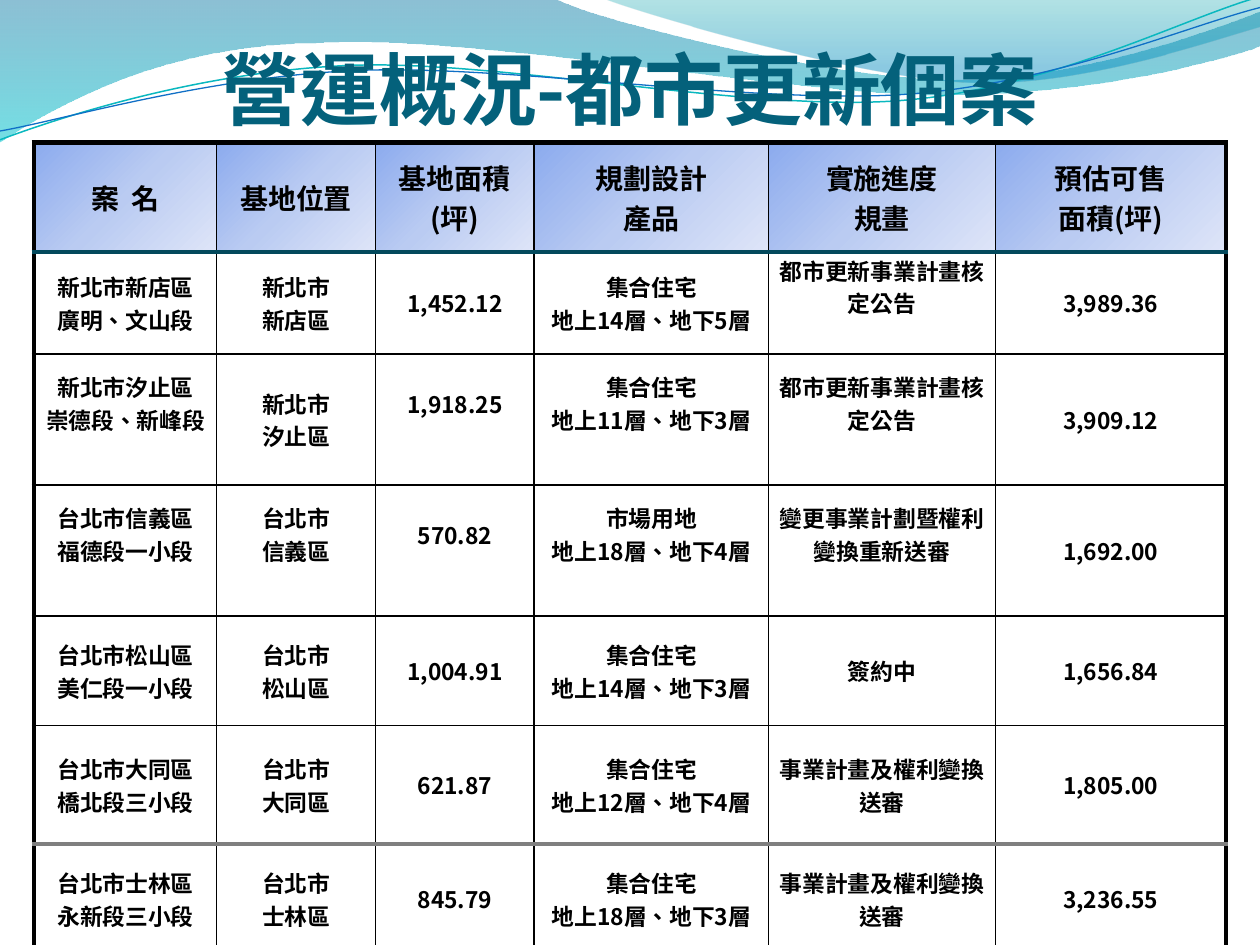
from lxml import etree
from pptx import Presentation
from pptx.dml.color import RGBColor
from pptx.enum.text import MSO_ANCHOR, MSO_AUTO_SIZE, PP_ALIGN
from pptx.oxml.ns import qn
from pptx.util import Inches, Pt

BOTTOM, MIDDLE = MSO_ANCHOR.BOTTOM, MSO_ANCHOR.MIDDLE
CENTER = PP_ALIGN.CENTER
NO_FIT = MSO_AUTO_SIZE.NONE
FONT = "Noto Sans CJK SC"
BLACK = RGBColor(0x00, 0x00, 0x00)
TITLE = RGBColor(0x04, 0x61, 0x7B)
HEAD_RULE = RGBColor(0x03, 0x49, 0x5C)
GRAY = RGBColor(0x7F, 0x7F, 0x7F)
DARK_GRAY = RGBColor(0x59, 0x59, 0x59)
WAVE_BLUE = RGBColor(0x00, 0x74, 0xA1)
WAVE_CYAN = RGBColor(0x00, 0xC6, 0xCF)
CREST_TEAL = RGBColor(0x00, 0xA1, 0xA9)
CREST_BLUE = RGBColor(0x00, 0x8B, 0xBF)
LINE_TEAL = RGBColor(0x0A, 0xB8, 0xBF)
LINE_BLUE = RGBColor(0x0F, 0x6F, 0xC6)
HEAD_STOPS = [(0, RGBColor(0x8C, 0xAB, 0xEE), 100), (50, RGBColor(0xBA, 0xCB, 0xF2), 100),
              (100, RGBColor(0xDE, 0xE5, 0xF8), 100)]


def add_gradient(parent, stops, angle):
    grad = etree.SubElement(parent, qn("a:gradFill"), rotWithShape="1")
    gs_list = etree.SubElement(grad, qn("a:gsLst"))
    for pos, color, alpha in stops:
        gs = etree.SubElement(gs_list, qn("a:gs"), pos=str(pos * 1000))
        clr = etree.SubElement(gs, qn("a:srgbClr"), val=str(color))
        etree.SubElement(clr, qn("a:alpha"), val=str(alpha * 1000))
    etree.SubElement(grad, qn("a:lin"), ang=str(angle * 60000), scaled="0")


def write_text(tf, text, size, color):
    tf.text = text
    for p in tf.paragraphs:
        p.alignment = CENTER
        for r in p.runs:
            r.font.size, r.font.bold, r.font.name = Pt(size), True, FONT
            r.font.color.rgb = color
            r_pr = r._r.get_or_add_rPr()
            r_pr.set("lang", "zh-TW")
            etree.SubElement(r_pr, qn("a:ea"), typeface=FONT)


prs = Presentation()
prs.slide_width, prs.slide_height = Inches(10), Inches(7.5)
s = prs.slides.add_slide(prs.slide_layouts[5])

waves = [
    ([(0, -0.01), (4.4, -0.01), (4.76, 0.17, 6.64, 0.63, 7.58, 0.63),
      (8.53, 0.63, 9.58, 0.26, 10, 0.09), (10.01, 0.36), (9.83, 0.44, 8.7, 0.76, 7.46, 0.75),
      (6.22, 0.75, 3.82, 0.28, 2.57, 0.34), (1.29, 0.35, 0.46, 0.83, -0.01, 1.13), (0, -0.01)],
     [(0, WAVE_BLUE, 45), (100, WAVE_CYAN, 55)], None, 0),
    ([(4.79, -0.01), (5.09, 0.11, 6.82, 0.62, 7.69, 0.65),
      (8.56, 0.69, 9.61, 0.32, 10, 0.21), (10, 0), (4.79, -0.01)],
     [(0, CREST_TEAL, 30), (80, CREST_BLUE, 45)], None, 0),
    ([(0, 1.11), (0.48, 0.93, 1.58, 0.57, 2.77, 0.52), (3.95, 0.47, 5.93, 0.89, 7.13, 0.8),
      (8.33, 0.71, 9.38, 0.15, 9.98, -0.02)], None, LINE_TEAL, 0.85),
    ([(0, 1.04), (0.47, 0.96, 1.64, 0.61, 2.83, 0.56), (4.03, 0.51, 5.97, 0.83, 7.17, 0.75),
      (8.36, 0.67, 9.41, 0.21, 10, 0.06)], None, LINE_BLUE, 0.75),
]
for segments, stops, color, width in waves:
    points = [(Inches(seg[-2]), Inches(seg[-1])) for seg in segments]
    fb = s.shapes.build_freeform(*points[0])
    fb.add_line_segments(points[1:], close=stops is not None)
    sp = fb.convert_to_shape()
    for seg, node in zip(segments[1:], list(sp._element.iter(qn("a:lnTo")))):
        if len(seg) == 6:
            node.clear()
            curve = etree.SubElement(node.getparent(), qn("a:cubicBezTo"))
            node.getparent().replace(node, curve)
            for x, y in zip(seg[::2], seg[1::2]):
                etree.SubElement(curve, qn("a:pt"), x=str(Inches(x) - sp.left),
                                 y=str(Inches(y) - sp.top))
    sp.shadow.inherit = False
    if stops:
        sp.line.fill.background()
        add_gradient(sp._element.spPr, stops, 90)
        sp._element.spPr.insert(2, sp._element.spPr[-1])
    else:
        sp.fill.background()
        sp.line.color.rgb, sp.line.width = color, Pt(width)

title = s.shapes.title
title._element.getparent().append(title._element)
title.left, title.top, title.width, title.height = Inches(0.5), 0, Inches(9), Inches(1.07)
tf = title.text_frame
tf.auto_size, tf.word_wrap, tf.vertical_anchor = NO_FIT, True, BOTTOM
tf.margin_left = tf.margin_right = tf.margin_bottom = 0
tf.margin_top = Inches(0.05)
write_text(tf, "營運概況-都市更新個案", 45, TITLE)

rows = [
    ["案  名", "基地位置", "基地面積\n(坪)", "規劃設計\n產品", "實施進度\n規畫", "預估可售\n面積(坪)"],
    ["新北市新店區\n廣明、文山段", "新北市\n新店區", "1,452.12",
     "集合住宅\n地上14層、地下5層", "都市更新事業計畫核定公告", "3,989.36"],
    ["新北市汐止區\n崇德段、新峰段", "新北市\n汐止區", "1,918.25",
     "集合住宅\n地上11層、地下3層", "都市更新事業計畫核定公告", "3,909.12"],
    ["台北市信義區\n福德段一小段", "台北市\n信義區", "570.82",
     "市場用地\n地上18層、地下4層", "變更事業計劃暨權利變換重新送審", "1,692.00"],
    ["台北市松山區\n美仁段一小段", "台北市\n松山區", "1,004.91",
     "集合住宅\n地上14層、地下3層", "簽約中", "1,656.84"],
    ["台北市大同區\n橋北段三小段", "台北市\n大同區", "621.87",
     "集合住宅\n地上12層、地下4層", "事業計畫及權利變換送審", "1,805.00"],
    ["台北市士林區\n永新段三小段", "台北市\n士林區", "845.79",
     "集合住宅\n地上18層、地下3層", "事業計畫及權利變換送審", "3,236.55"],
]
col_widths = [1.45, 1.26, 1.26, 1.86, 1.8, 1.83]
row_heights = [0.87, 0.81, 1.04, 1.04, 0.87, 0.94, 0.87]
thin, thick = (BLACK, 1), (BLACK, 3)
v_rules = [thick] + [thin] * 5 + [thick]
h_rules = [thick, (HEAD_RULE, 3)] + [thin] * 4 + [(GRAY, 2.25), (DARK_GRAY, 3)]
raised = {1: [4], 2: [0, 2, 3, 4], 3: [0, 1, 2, 3, 4]}

table = s.shapes.add_table(len(rows), len(col_widths), Inches(0.27), Inches(1.13),
                           Inches(sum(col_widths)), Inches(sum(row_heights))).table
table.first_row = table.horz_banding = False
for col, width in zip(table.columns, col_widths):
    col.width = Inches(width)
for i, texts in enumerate(rows):
    table.rows[i].height = Inches(row_heights[i])
    for j, text in enumerate(texts):
        cell = table.cell(i, j)
        cell.vertical_anchor = MIDDLE
        cell.margin_left = cell.margin_right = Inches(0.05)
        cell.margin_top = 0
        cell.margin_bottom = Inches(0.26 if j in raised.get(i, []) else 0)
        write_text(cell.text_frame, text, 13 if i else 16, BLACK)
        tc_pr = cell._tc.get_or_add_tcPr()
        below = thick if i == len(rows) - 1 and j > 3 else h_rules[i + 1]
        borders = {"L": v_rules[j], "R": v_rules[j + 1], "T": h_rules[i], "B": below}
        for side, (color, width) in borders.items():
            ln = etree.SubElement(tc_pr, qn("a:ln" + side), w=str(Pt(width)))
            fill = etree.SubElement(ln, qn("a:solidFill"))
            etree.SubElement(fill, qn("a:srgbClr"), val=str(color))
        if i == 0:
            add_gradient(tc_pr, HEAD_STOPS, 45)
        else:
            cell.fill.background()

prs.save("out.pptx")
